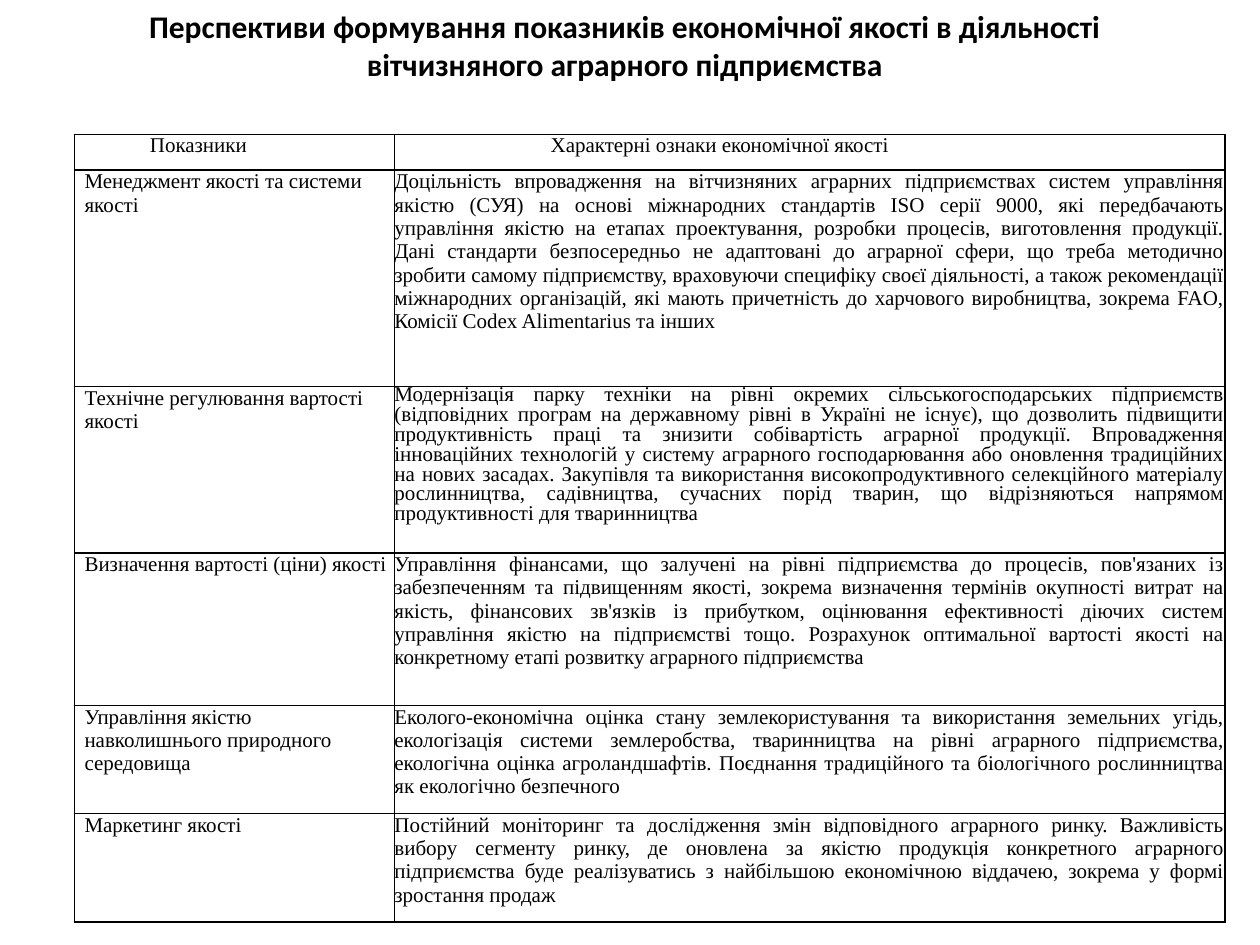
from lxml import etree
from pptx import Presentation
from pptx.dml.color import RGBColor
from pptx.enum.text import MSO_AUTO_SIZE, PP_ALIGN
from pptx.oxml.ns import qn
from pptx.util import Pt

LEFT, CENTER, JUSTIFY = PP_ALIGN.LEFT, PP_ALIGN.CENTER, PP_ALIGN.JUSTIFY
FIT_SHAPE = MSO_AUTO_SIZE.SHAPE_TO_FIT_TEXT
BLACK, WHITE = "000000", "FFFFFF"

TITLE = ("Перспективи формування показників економічної якості в діяльності "
         "вітчизняного аграрного підприємства")
HEADINGS = ("Показники", "Характерні ознаки економічної якості")
INDICATORS = [
    ("Менеджмент якості та системи якості",
     "Доцільність впровадження на вітчизняних аграрних підприємствах систем управління "
     "якістю (СУЯ) на основі міжнародних стандартів ISO серії 9000, які передбачають "
     "управління якістю на етапах проектування, розробки процесів, виготовлення продукції. "
     "Дані стандарти безпосередньо не адаптовані до аграрної сфери, що треба методично "
     "зробити самому підприємству, враховуючи специфіку своєї діяльності, а також "
     "рекомендації міжнародних організацій, які мають причетність до харчового "
     "виробництва, зокрема FAO, Комісії Codex Alimentarius та інших"),
    ("Технічне регулювання вартості якості",
     "Модернізація парку техніки на рівні окремих сільськогосподарських підприємств "
     "(відповідних програм на державному рівні в Україні не існує), що дозволить підвищити "
     "продуктивність праці та знизити собівартість аграрної продукції. Впровадження "
     "інноваційних технологій у систему аграрного господарювання або оновлення традиційних "
     "на нових засадах. Закупівля та використання високопродуктивного селекційного "
     "матеріалу рослинництва, садівництва, сучасних порід тварин, що відрізняються "
     "напрямом продуктивності для тваринництва"),
    ("Визначення вартості (ціни) якості",
     "Управління фінансами, що залучені на рівні підприємства до процесів, пов'язаних із "
     "забезпеченням та підвищенням якості, зокрема визначення термінів окупності витрат на "
     "якість, фінансових зв'язків із прибутком, оцінювання ефективності діючих систем "
     "управління якістю на підприємстві тощо. Розрахунок оптимальної вартості якості на "
     "конкретному етапі розвитку аграрного підприємства"),
    ("Управління якістю навколишнього природного середовища",
     "Еколого-економічна оцінка стану землекористування та використання земельних угідь, "
     "екологізація системи землеробства, тваринництва на рівні аграрного підприємства, "
     "екологічна оцінка агроландшафтів. Поєднання традиційного та біологічного "
     "рослинництва як екологічно безпечного"),
    ("Маркетинг якості",
     "Постійний моніторинг та дослідження змін відповідного аграрного ринку. Важливість "
     "вибору сегменту ринку, де оновлена за якістю продукція конкретного аграрного "
     "підприємства буде реалізуватись з найбільшою економічною віддачею, зокрема у формі "
     "зростання продаж"),
]
COLUMN_WIDTHS = (182.9, 474.5)
ROW_HEIGHTS = (20.2, 123.8, 95, 87.1, 61.9, 61.9)
HEADING_INDENTS = (43.2, 89.3)
INDICATOR_INDENT = 5.8
HEADING_SPACING = 12.7
TIGHT_ROW, TIGHT_SPACING = 2, 11.3


def color(value):
    """Turn a hex string into a colour."""
    return RGBColor.from_string(value)


def write(frame, text, font="Times New Roman", size=12, bold=False,
          align=LEFT, indent=0, spacing=None):
    """Write one formatted paragraph into a text frame."""
    frame.word_wrap = True
    para = frame.paragraphs[0]
    para.alignment = align
    if indent:
        para._p.get_or_add_pPr().set("marL", str(Pt(indent)))
    if spacing:
        para.line_spacing = Pt(spacing)
    span = para.add_run()
    span.text = text
    span.font.name, span.font.size, span.font.bold = font, Pt(size), bold
    span.font.color.rgb = color(BLACK)


def style_cell(cell):
    """Give a cell no margins, a thin black border and a white fill."""
    cell.margin_left = cell.margin_right = cell.margin_top = cell.margin_bottom = 0
    properties = cell._tc.get_or_add_tcPr()
    for side in ("lnL", "lnR", "lnT", "lnB"):
        line = etree.SubElement(properties, qn(f"a:{side}"), w=str(Pt(1)))
        fill = etree.SubElement(line, qn("a:solidFill"))
        etree.SubElement(fill, qn("a:srgbClr"), val=BLACK)
    cell.fill.solid()
    cell.fill.fore_color.rgb = color(WHITE)


def add_title(page, left, top, width, height):
    """Place the centred slide title."""
    box = page.shapes.add_textbox(Pt(left), Pt(top), Pt(width), Pt(height))
    write(box.text_frame, TITLE, font="Calibri", size=18, bold=True, align=CENTER)
    box.text_frame.auto_size = FIT_SHAPE


def add_indicator_table(page, left, top, width, height):
    """Place the table of quality indicators and their features."""
    table = page.shapes.add_table(len(ROW_HEIGHTS), len(COLUMN_WIDTHS), Pt(left), Pt(top),
                                  Pt(width), Pt(height)).table
    table.first_row = table.horz_banding = False
    for column, column_width in zip(table.columns, COLUMN_WIDTHS):
        column.width = Pt(column_width)
    for row, row_height in zip(table.rows, ROW_HEIGHTS):
        row.height = Pt(row_height)
    for cell in table.iter_cells():
        style_cell(cell)
    for column, (heading, indent) in enumerate(zip(HEADINGS, HEADING_INDENTS)):
        write(table.cell(0, column).text_frame, heading, indent=indent,
              spacing=HEADING_SPACING)
    for row, (indicator, features) in enumerate(INDICATORS, start=1):
        write(table.cell(row, 0).text_frame, indicator, indent=INDICATOR_INDENT)
        write(table.cell(row, 1).text_frame, features, align=JUSTIFY,
              spacing=TIGHT_SPACING if row == TIGHT_ROW else None)


def main():
    """Build and save the deck."""
    deck = Presentation()
    deck.slide_width, deck.slide_height = Pt(720), Pt(540)
    page = deck.slides.add_slide(deck.slide_layouts[6])
    add_indicator_table(page, 42.5, 77, sum(COLUMN_WIDTHS), sum(ROW_HEIGHTS))
    add_title(page, 42.5, 0.7, 629.3, 51)
    deck.save("out.pptx")


if __name__ == "__main__":
    main()
